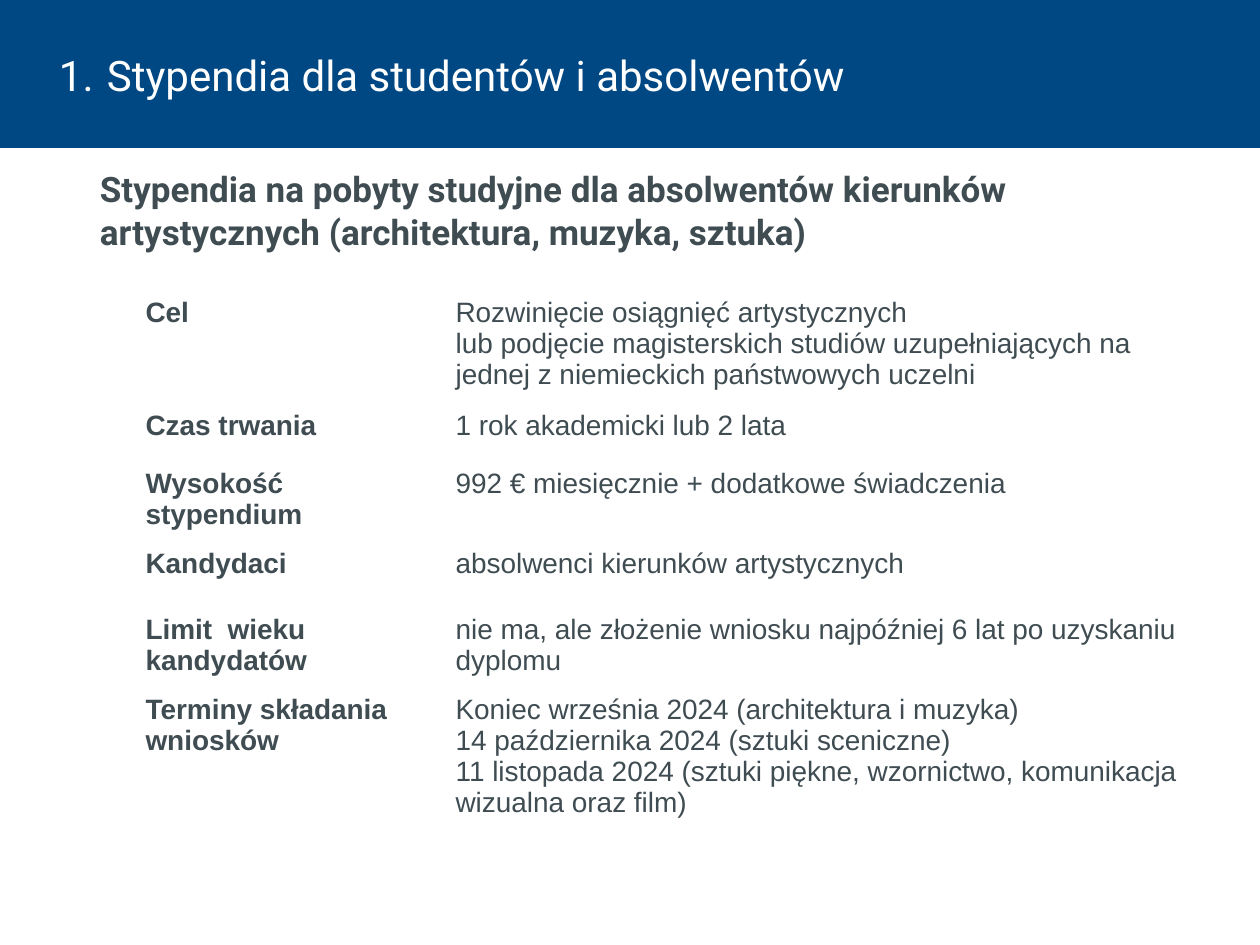
from dataclasses import dataclass
from typing import Any

import pptx
import pptx.dml.color
import pptx.enum.shapes
import pptx.enum.text
import pptx.oxml.xmlchemy
import pptx.util
from lxml import etree

EMU_PER_PX = 914400 / 126
NAVY = pptx.dml.color.RGBColor(0x00, 0x48, 0x83)
SLATE = pptx.dml.color.RGBColor(0x3F, 0x4C, 0x52)
WHITE = pptx.dml.color.RGBColor(0xFF, 0xFF, 0xFF)
DRAWING_NS = "{http://schemas.openxmlformats.org/drawingml/2006/main}"


@dataclass(frozen=True)
class TextStyle:
    font: str
    size: int
    color: pptx.dml.color.RGBColor
    bold: bool = False


@dataclass(frozen=True)
class Detail:
    label: str
    lines: tuple[str, ...]
    height: int


TITLE = TextStyle("Roboto", 24, WHITE)
SUBTITLE = TextStyle("Roboto", 20, SLATE, True)
LABEL = TextStyle("Arial", 16, SLATE, True)
VALUE = TextStyle("Arial", 16, SLATE)

SUBTITLE_LINES = (
    "Stypendia na pobyty studyjne dla absolwentów kierunków",
    "artystycznych (architektura, muzyka, sztuka)",
)
COLUMN_WIDTHS = (310, 751)
DETAILS = (
    Detail("Cel", (
        "Rozwinięcie osiągnięć artystycznych",
        "lub podjęcie magisterskich studiów uzupełniających na "
        "jednej z niemieckich państwowych uczelni",
    ), 111),
    Detail("Czas trwania", ("1 rok akademicki lub 2 lata",), 58),
    Detail("Wysokość stypendium", ("992 € miesięcznie + dodatkowe świadczenia",), 80),
    Detail("Kandydaci", ("absolwenci kierunków artystycznych",), 66),
    Detail("Limit  wieku kandydatów", (
        "nie ma, ale złożenie wniosku najpóźniej 6 lat po uzyskaniu dyplomu",
    ), 78),
    Detail("Terminy składania wniosków", (
        "Koniec września 2024 (architektura i muzyka)",
        "14 października 2024 (sztuki sceniczne)",
        "11 listopada 2024 (sztuki piękne, wzornictwo, komunikacja wizualna oraz film)",
    ), 164),
)


def px(length: int) -> pptx.util.Emu:
    return pptx.util.Emu(round(length * EMU_PER_PX))


def set_format(target: Any, values: dict[str, Any]) -> None:
    for name, value in values.items():
        setattr(target, name, value)


def write_lines(frame: Any, lines: tuple[str, ...], style: TextStyle) -> None:
    frame.word_wrap = True
    for index, line in enumerate(lines):
        paragraph = frame.add_paragraph() if index else frame.paragraphs[0]
        paragraph.alignment = pptx.enum.text.PP_ALIGN.LEFT
        run = paragraph.add_run()
        run.text = line
        set_format(run.font, {
            "name": style.font,
            "size": pptx.util.Pt(style.size),
            "bold": style.bold,
        })
        run.font.color.rgb = style.color


def number_paragraph(paragraph: Any, indent: int) -> None:
    properties = paragraph._p.get_or_add_pPr()
    properties.set("marL", str(px(indent)))
    properties.set("indent", str(-px(indent)))
    etree.SubElement(properties, DRAWING_NS + "buFont", typeface="+mj-lt")
    etree.SubElement(properties, DRAWING_NS + "buAutoNum", type="arabicPeriod")


def add_title(slide: Any) -> None:
    banner = slide.shapes.add_shape(
        pptx.enum.shapes.MSO_SHAPE.RECTANGLE, 0, 0, px(1260), px(148))
    banner.shadow.inherit = False
    banner.fill.solid()
    banner.fill.fore_color.rgb = NAVY
    banner.line.fill.background()
    frame = banner.text_frame
    set_format(frame, {
        "margin_left": px(59),
        "margin_right": px(13),
        "margin_top": px(6),
        "margin_bottom": px(6),
        "vertical_anchor": pptx.enum.text.MSO_ANCHOR.MIDDLE,
    })
    number_paragraph(frame.paragraphs[0], 48)
    write_lines(frame, ("Stypendia dla studentów i absolwentów",), TITLE)
    frame.paragraphs[0].line_spacing = pptx.util.Pt(30)


def add_subtitle(slide: Any) -> None:
    frame = slide.shapes.add_textbox(px(100), px(168), px(1061), px(98)).text_frame
    set_format(frame, dict.fromkeys(
        ("margin_left", "margin_right", "margin_top", "margin_bottom"), 0))
    write_lines(frame, SUBTITLE_LINES, SUBTITLE)


def add_borders(cell: Any) -> None:
    properties = cell._tc.get_or_add_tcPr()
    for side in ("lnL", "lnR", "lnT", "lnB"):
        line = etree.SubElement(properties, DRAWING_NS + side, w=str(pptx.util.Pt(1)))
        fill = etree.SubElement(line, DRAWING_NS + "solidFill")
        etree.SubElement(fill, DRAWING_NS + "srgbClr", val=str(WHITE))


def fill_cell(cell: Any, lines: tuple[str, ...], style: TextStyle) -> None:
    add_borders(cell)
    cell.fill.background()
    write_lines(cell.text_frame, lines, style)


def add_details(slide: Any) -> None:
    table = slide.shapes.add_table(
        len(DETAILS), len(COLUMN_WIDTHS), px(133), px(291),
        px(sum(COLUMN_WIDTHS)), px(sum(detail.height for detail in DETAILS))).table
    set_format(table, {"first_row": False, "horz_banding": False})
    for column, width in zip(table.columns, COLUMN_WIDTHS):
        column.width = px(width)
    for row, detail in zip(table.rows, DETAILS):
        row.height = px(detail.height)
        fill_cell(row.cells[0], (detail.label,), LABEL)
        fill_cell(row.cells[1], detail.lines, VALUE)


def main() -> None:
    presentation = pptx.Presentation()
    set_format(presentation, {"slide_width": px(1260), "slide_height": px(945)})
    slide = presentation.slides.add_slide(presentation.slide_layouts[6])
    add_title(slide)
    add_subtitle(slide)
    add_details(slide)
    presentation.save("out.pptx")


if __name__ == "__main__":
    main()
